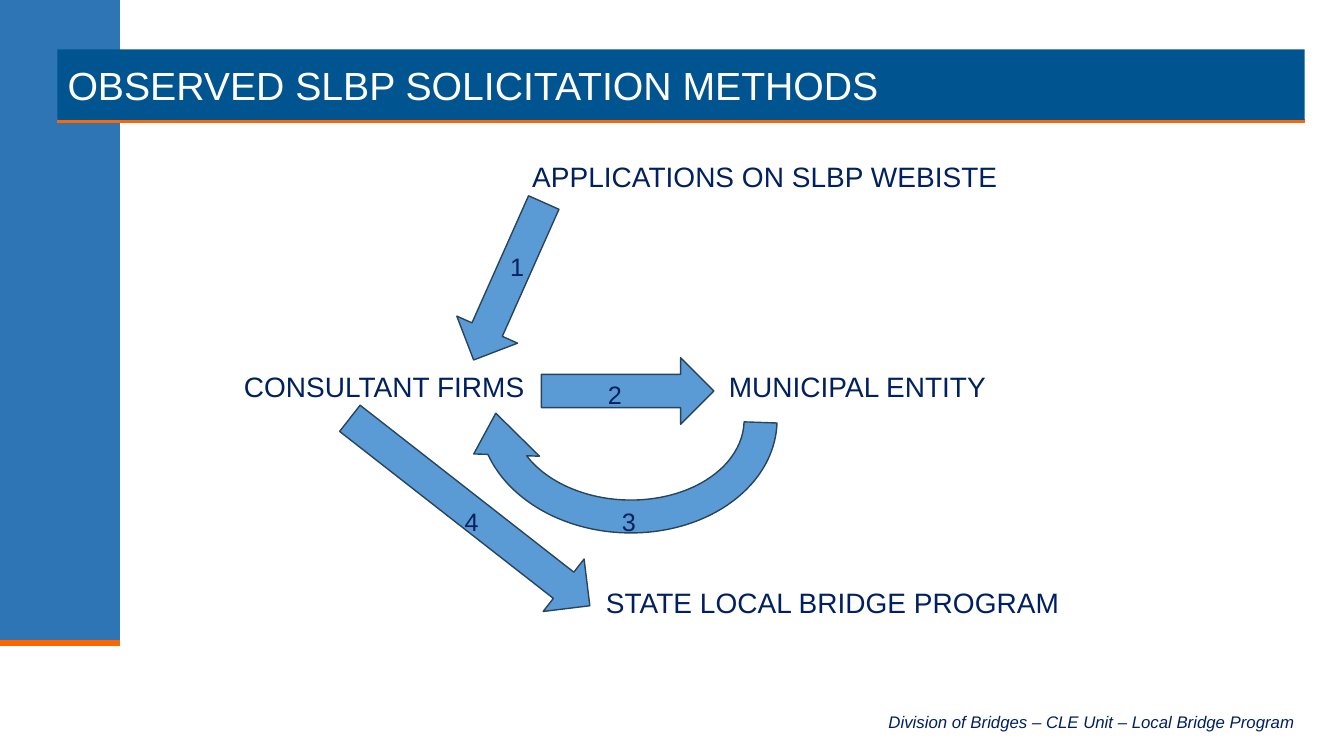
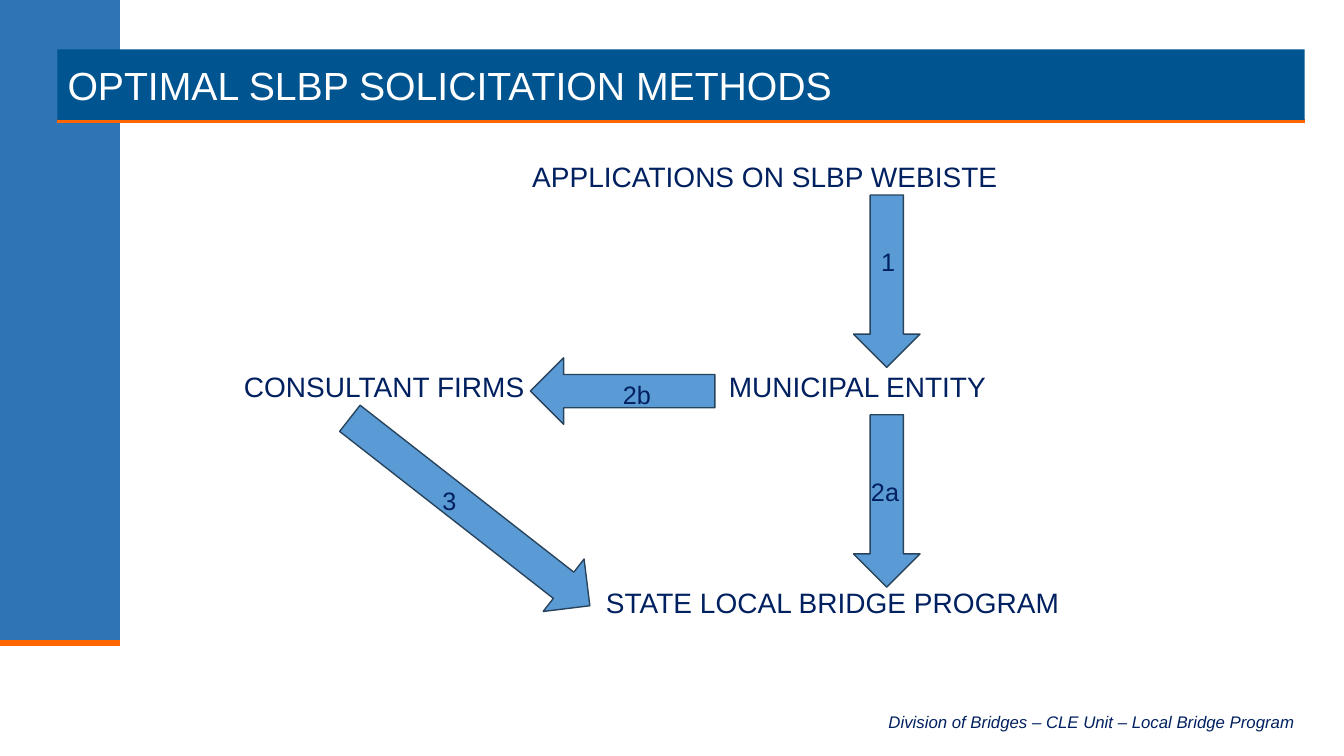
from dataclasses import dataclass

from lxml.etree import SubElement
from pptx import Presentation
from pptx.dml.color import RGBColor
from pptx.enum.shapes import MSO_CONNECTOR, MSO_SHAPE
from pptx.enum.text import MSO_ANCHOR, MSO_AUTO_SIZE, PP_ALIGN
from pptx.oxml.ns import qn
from pptx.util import Inches, Pt


@dataclass(frozen=True)
class Theme:
    font: str = "Arial"
    side: str = "2E75B6"
    band: str = "005490"
    rule: str = "FF6600"
    ink: str = "002060"
    white: str = "FFFFFF"
    arrow: str = "5B9BD5"
    edge: str = "28445D"
    title: int = 28
    label: int = 20
    number: int = 18
    foot: int = 12


class Deck:
    def __init__(self, theme):
        self.theme = theme
        self.file = Presentation()
        self.file.slide_width = Inches(13.33)
        self.file.slide_height = Inches(7.5)
        self.layout = self.file.slide_layouts[1]
        self.slide = None

    def start(self, title):
        self.slide = self.file.slides.add_slide(self.layout)
        if len(self.file.slides) == 1:
            self.brand()
        self.title(title)
        self.foot("Division of Bridges – CLE Unit – Local Bridge Program")

    def brand(self):
        parts = [
            self.bar(0, 0, 1.19, 6.38),
            self.line(0, 1.19, 6.38, 4.5),
            self.line(0.57, 12.94, 1.2, 2.25),
        ]
        for spot, part in enumerate(parts, 2):
            self.layout.shapes.element.insert(spot, part.element)

    def paint(self, shape, color):
        shape.shadow.inherit = False
        shape.fill.solid()
        shape.fill.fore_color.rgb = RGBColor.from_string(color)

    def bar(self, x, y, w, h):
        bar = self.slide.shapes.add_shape(
            MSO_SHAPE.RECTANGLE, Inches(x), Inches(y), Inches(w), Inches(h))
        self.paint(bar, self.theme.side)
        bar.line.fill.background()
        return bar

    def line(self, left, right, y, width):
        line = self.slide.shapes.add_connector(
            MSO_CONNECTOR.STRAIGHT, Inches(left), Inches(y), Inches(right), Inches(y))
        line.line.color.rgb = RGBColor.from_string(self.theme.rule)
        line.line.width = Pt(width)
        SubElement(line.element.spPr, qn("a:effectLst"))
        return line

    def place(self, shape, x, y, w, h):
        shape.left, shape.top = Inches(x), Inches(y)
        shape.width, shape.height = Inches(w), Inches(h)

    def words(self, shape, text, size, color, align=PP_ALIGN.LEFT, slant=False):
        frame = shape.text_frame
        frame.text = text
        frame.word_wrap = True
        frame.auto_size = MSO_AUTO_SIZE.NONE
        para = frame.paragraphs[0]
        para.alignment = align
        para.space_before = Pt(0)
        for run in para.runs:
            run.font.name = self.theme.font
            run.font.size = Pt(size)
            run.font.italic = slant
            run.font.color.rgb = RGBColor.from_string(color)
        return frame

    def box(self, x, y, w, h):
        return self.slide.shapes.add_textbox(Inches(x), Inches(y), Inches(w), Inches(h))

    def title(self, text):
        shape = self.slide.shapes.title
        self.place(shape, 0.57, 0.49, 12.37, 0.7)
        self.paint(shape, self.theme.band)
        frame = self.words(shape, text, self.theme.title, self.theme.white)
        frame.vertical_anchor = MSO_ANCHOR.MIDDLE

    def foot(self, text):
        self.words(self.box(1.92, 7.01, 11.02, 0.34), text, self.theme.foot,
                   self.theme.ink, PP_ALIGN.RIGHT, True)

    def label(self, shape, text):
        frame = self.words(shape, text, self.theme.label, self.theme.ink)
        frame.paragraphs[0].line_spacing = 0.9
        return frame

    def body(self, text, x, y, w):
        shape = self.slide.placeholders[1]
        self.place(shape, x, y, w, 0.47)
        para = self.label(shape, text).paragraphs[0]
        props = para._p.get_or_add_pPr()
        props.set("marL", "0")
        props.set("indent", "0")
        SubElement(props, qn("a:buNone"))

    def nodes(self):
        self.body("STATE LOCAL BRIDGE PROGRAM", 5.91, 5.8, 4.9)
        for text, x, y, w in (
            ("APPLICATIONS ON SLBP WEBISTE", 5.18, 1.57, 4.9),
            ("CONSULTANT FIRMS", 2.32, 3.65, 3.04),
            ("MUNICIPAL ENTITY", 7.13, 3.65, 3.04),
        ):
            self.label(self.box(x, y, w, 0.47), text)

    def arrow(self, x, y, w, turn=0, h=0.66, kind=MSO_SHAPE.RIGHT_ARROW):
        arrow = self.slide.shapes.add_shape(
            kind, Inches(x), Inches(y), Inches(w), Inches(h))
        self.paint(arrow, self.theme.arrow)
        arrow.line.color.rgb = RGBColor.from_string(self.theme.edge)
        arrow.line.width = Pt(1)
        arrow.rotation = turn

    def number(self, text, x, y, w=0.29):
        frame = self.words(self.box(x, y, w, 0.4), text,
                           self.theme.number, self.theme.ink)
        frame.margin_right = 0


def main():
    deck = Deck(Theme())
    submit = (3.15, 4.75, 3.02, 38)
    pages = (
        ("OBSERVED SLBP SOLICITATION METHODS",
         ((4.59, 2.84, 3.28, 182, 2.61, MSO_SHAPE.CIRCULAR_ARROW),
          (4.19, 2.46, 1.71, 114), (5.37, 3.55, 1.71), submit),
         (("1", 4.96, 2.44), ("2", 5.93, 3.71),
          ("3", 6.07, 4.97), ("4", 4.51, 4.97))),
        ("OPTIMAL SLBP SOLICITATION METHODS",
         ((7.94, 2.46, 1.71, 90), (7.94, 4.64, 1.71, 90),
          submit, (5.26, 3.55, 1.83, 180)),
         (("1", 8.64, 2.39), ("2b", 6.08, 3.71, 0.57),
          ("3", 4.29, 4.77), ("2a", 8.54, 4.68, 0.48))),
    )
    for title, arrows, numbers in pages:
        deck.start(title)
        deck.nodes()
        for arrow in arrows:
            deck.arrow(*arrow)
        for number in numbers:
            deck.number(*number)
    deck.file.save("out.pptx")


if __name__ == "__main__":
    main()
